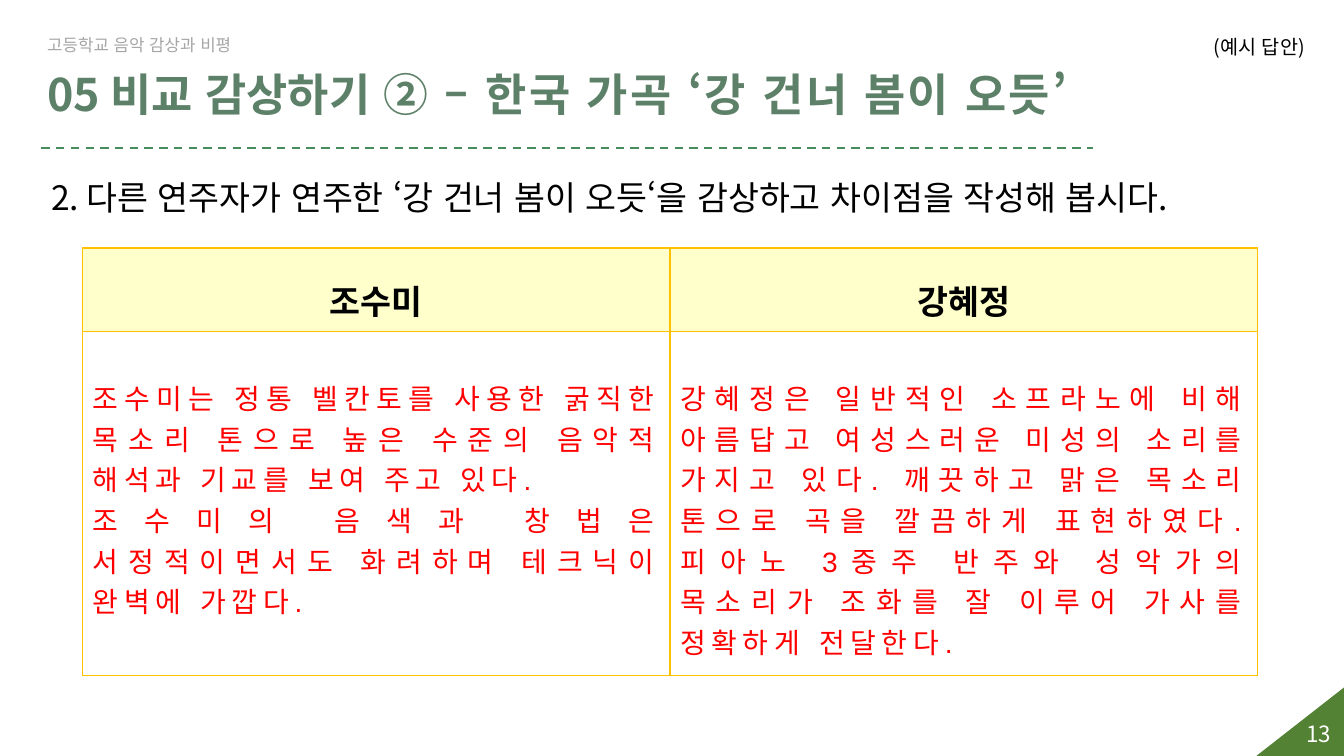
from dataclasses import dataclass

from pptx import Presentation
from pptx.dml.color import RGBColor
from pptx.enum.dml import MSO_LINE
from pptx.enum.shapes import MSO_CONNECTOR, MSO_SHAPE
from pptx.enum.text import MSO_ANCHOR, MSO_AUTO_SIZE, PP_ALIGN
from pptx.oxml.ns import qn
from pptx.util import Inches, Pt
from lxml.etree import SubElement

TITLE = [("05 비교 감상하기 ", 0), ("② – 한국 가곡 ‘강 건너 봄이 오듯’", 1.5)]
COURSE = "고등학교 음악 감상과 비평"
ANSWER_TAG = "(예시 답안)"
QUESTION = "2. 다른 연주자가 연주한 ‘강 건너 봄이 오듯‘을 감상하고 차이점을 작성해 봅시다."
PAGE_NUMBER = "13"
SINGERS = {
    "조수미": [
        "조수미는 정통 벨칸토를 사용한 굵직한 목소리 톤으로 높은 수준의 음악적 해석과 기교를 보여 주고 있다.",
        "조수미의 음색과 창법은 서정적이면서도 화려하며 테크닉이 완벽에 가깝다.",
    ],
    "강혜정": [
        "강혜정은 일반적인 소프라노에 비해 아름답고 여성스러운 미성의 소리를 가지고 있다. "
        "깨끗하고 맑은 목소리 톤으로 곡을 깔끔하게 표현하였다. "
        "피아노 3중주 반주와 성악가의 목소리가 조화를 잘 이루어 가사를 정확하게 전달한다.",
    ],
}


@dataclass(frozen=True)
class Theme:
    font: str = "Noto Sans CJK KR"
    answer_font: str = "Arial"
    black: str = "000000"
    white: str = "FFFFFF"
    gray: str = "A6A6A6"
    title: str = "5D8068"
    rule: str = "478C5C"
    corner: str = "548235"
    answer: str = "FF0000"
    header_fill: str = "FFFFCC"
    border: str = "FFC000"
    title_size: int = 32
    heading_size: int = 24
    answer_size: int = 20
    page_size: int = 16
    tag_size: int = 14
    course_size: int = 12


THEME = Theme()


def write(paragraph, text, size, color=THEME.black, font=THEME.font, bold=False,
          spacing=0, align=PP_ALIGN.LEFT):
    paragraph.alignment = align
    run = paragraph.add_run()
    run.text = text
    run.font.size = Pt(size)
    run.font.bold = bold
    run.font.name = font
    run.font.color.rgb = RGBColor.from_string(color)
    properties = run.font._element
    properties.set("lang", "ko-KR")
    if spacing:
        properties.set("spc", str(int(spacing * 100)))
    east_asian = SubElement(properties, qn("a:ea"))
    east_asian.set("typeface", THEME.font)


def add_label(slide, box, text, **text_format):
    shape = slide.shapes.add_textbox(*map(Inches, box))
    shape.text_frame.word_wrap = True
    write(shape.text_frame.paragraphs[0], text, **text_format)


def add_border(cell):
    properties = cell._tc.get_or_add_tcPr()
    for position, side in enumerate(("a:lnL", "a:lnR", "a:lnT", "a:lnB")):
        line = SubElement(properties, qn(side), w=str(Pt(1)))
        fill = SubElement(line, qn("a:solidFill"))
        SubElement(fill, qn("a:srgbClr"), val=THEME.border)
        properties.remove(line)
        properties.insert(position, line)


def fill_cell(cell, lines, top, fill=None, **text_format):
    cell.margin_top = Inches(top)
    if fill:
        cell.fill.solid()
        cell.fill.fore_color.rgb = RGBColor.from_string(fill)
    else:
        cell.fill.background()
    add_border(cell)
    for index, line in enumerate(lines):
        frame = cell.text_frame
        paragraph = frame.add_paragraph() if index else frame.paragraphs[0]
        write(paragraph, line, **text_format)


def add_title(slide):
    title = slide.shapes.title
    title.left, title.top, title.width, title.height = map(Inches, (0.37, 0.61, 10.47, 0.64))
    frame = title.text_frame
    frame.word_wrap = True
    frame.auto_size = MSO_AUTO_SIZE.NONE
    frame.vertical_anchor = MSO_ANCHOR.MIDDLE
    for text, spacing in TITLE:
        write(frame.paragraphs[0], text, size=THEME.title_size, color=THEME.title,
              bold=True, spacing=spacing)


def add_corner(slide):
    corner = slide.shapes.add_shape(
        MSO_SHAPE.ISOSCELES_TRIANGLE, *map(Inches, (12.56, 6.73, 0.68, 0.87)))
    corner.adjustments[0] = 0
    corner.rotation = 270
    corner.shadow.inherit = False
    corner.fill.solid()
    corner.fill.fore_color.rgb = RGBColor.from_string(THEME.corner)
    corner.line.color.rgb = RGBColor.from_string(THEME.corner)
    corner.line.width = Pt(1)


def add_rule(slide):
    rule = slide.shapes.add_connector(
        MSO_CONNECTOR.STRAIGHT, *map(Inches, (0.41, 1.47, 10.84, 1.47)))
    rule.line.color.rgb = RGBColor.from_string(THEME.rule)
    rule.line.width = Pt(1.5)
    rule.line.dash_style = MSO_LINE.DASH
    SubElement(rule._element.spPr, qn("a:effectLst"))


def add_comparison(slide):
    frame = slide.shapes.add_table(
        2, len(SINGERS), *map(Inches, (0.82, 2.46, 11.65, 4.25)))
    table = frame.table
    table.first_row = table.horz_banding = False
    for row, height in zip(table.rows, (0.83, 3.41)):
        row.height = Inches(height)
    for column, (singer, answers) in enumerate(SINGERS.items()):
        fill_cell(table.cell(0, column), [singer], top=0.27, fill=THEME.header_fill,
                  size=THEME.heading_size, bold=True, align=PP_ALIGN.CENTER)
        fill_cell(table.cell(1, column), answers, top=0.45, size=THEME.answer_size,
                  color=THEME.answer, font=THEME.answer_font, spacing=4,
                  align=PP_ALIGN.JUSTIFY)


def main():
    presentation = Presentation()
    presentation.slide_width = Inches(13.33)
    presentation.slide_height = Inches(7.5)
    slide = presentation.slides.add_slide(presentation.slide_layouts[5])
    add_corner(slide)
    add_label(slide, (12.86, 7.1, 0.47, 0.37), PAGE_NUMBER,
              size=THEME.page_size, color=THEME.white)
    add_label(slide, (11.94, 0.3, 1.14, 0.34), ANSWER_TAG, size=THEME.tag_size)
    add_label(slide, (0.37, 0.3, 3.45, 0.3), COURSE,
              size=THEME.course_size, color=THEME.gray)
    add_title(slide)
    add_rule(slide)
    add_label(slide, (0.41, 1.71, 12.1, 0.5), QUESTION, size=THEME.heading_size)
    add_comparison(slide)
    presentation.save("out.pptx")


if __name__ == "__main__":
    main()
